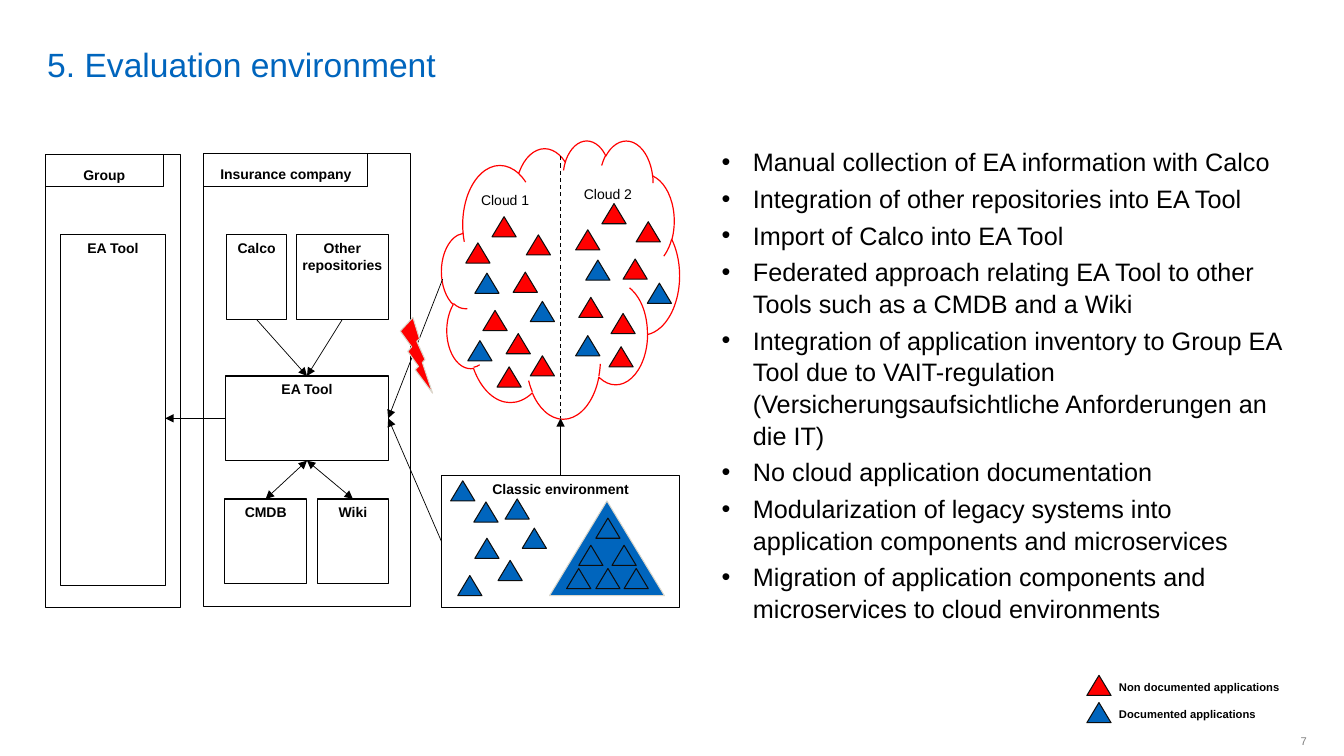
import pptx
import pptx.util
import pptx.dml.color
import pptx.enum.dml
import pptx.enum.shapes
import pptx.enum.text
import pptx.oxml.ns
from lxml import etree

Inches = pptx.util.Inches
Pt = pptx.util.Pt
RGBColor = pptx.dml.color.RGBColor
SHAPE = pptx.enum.shapes.MSO_SHAPE
ALIGN = pptx.enum.text.PP_ALIGN
ANCHOR = pptx.enum.text.MSO_ANCHOR
qn = pptx.oxml.ns.qn

BLACK = RGBColor(0x00, 0x00, 0x00)
INK = RGBColor(0x0D, 0x0D, 0x0D)
WHITE = RGBColor(0xFF, 0xFF, 0xFF)
RED = RGBColor(0xFF, 0x00, 0x00)
BLUE = RGBColor(0x00, 0x65, 0xBD)
GREY = RGBColor(0x80, 0x80, 0x80)
SAND = RGBColor(0xDA, 0xD7, 0xCB)

TOP, LEFT, BOTTOM, RIGHT = range(4)

CLASSIC_APPS = [(4.54, 5.71), (4.94, 5.56), (4.71, 5.34), (5.18, 5.24),
                (4.7, 4.98), (5.01, 4.95), (4.47, 4.77)]
LEGACY_MODULES = [(5.91, 5.14), (5.74, 5.41), (6.07, 5.41),
                  (5.62, 5.64), (5.91, 5.64), (6.19, 5.64)]
CLOUD_DOCUMENTED = [(4.64, 3.38), (5.26, 2.99), (4.71, 2.71),
                    (5.71, 3.33), (6.42, 2.81), (5.81, 2.58)]
CLOUD_UNDOCUMENTED = [(5.02, 3.31), (4.79, 3.08), (5.09, 2.7), (4.62, 2.41),
                      (4.93, 3.64), (5.26, 3.53), (4.88, 2.15), (5.22, 2.33),
                      (6.06, 3.11), (5.74, 2.95), (6.18, 2.57), (5.71, 2.28),
                      (6.04, 3.44), (5.97, 2.02), (6.31, 2.2)]
FINDINGS = [
    "Manual collection of EA information with Calco",
    "Integration of other repositories into EA Tool",
    "Import of Calco into EA Tool",
    "Federated approach relating EA Tool to other Tools such as a CMDB and a Wiki",
    "Integration of application inventory to Group EA Tool due to VAIT-regulation "
    "(Versicherungsaufsichtliche Anforderungen an die IT)",
    "No cloud application documentation",
    "Modularization of legacy systems into application components and microservices",
    "Migration of application components and microservices to cloud environments",
]


class Diagram:
    font = "Arial"

    def __init__(self, slide):
        self.slide = slide

    def fill_text(self, shape, lines, size, color=BLACK, bold=False, align=ALIGN.LEFT,
                  anchor=ANCHOR.TOP, inset=(0.1, 0.05), gap=0, spacing=None, bullet=None):
        frame = shape.text_frame
        frame.text = "\n".join(lines)
        frame.word_wrap = True
        frame.vertical_anchor = anchor
        frame.margin_left = frame.margin_right = Inches(inset[0])
        frame.margin_top = frame.margin_bottom = Inches(inset[1])
        for index, paragraph in enumerate(frame.paragraphs):
            paragraph.alignment = align
            if spacing:
                paragraph.line_spacing = spacing
            if index and gap:
                paragraph.space_before = Pt(gap)
            if bullet:
                properties = paragraph._p.get_or_add_pPr()
                properties.set("marL", str(Inches(0.31)))
                properties.set("indent", str(-Inches(0.31)))
                etree.SubElement(properties, qn("a:buFont"), typeface=self.font)
                etree.SubElement(properties, qn("a:buChar"), char=bullet)
            for run in paragraph.runs:
                run.font.name = self.font
                run.font.size = Pt(size)
                run.font.bold = bold
                run.font.color.rgb = color

    def text(self, at, lines, size, **style):
        box = self.slide.shapes.add_textbox(*map(Inches, at))
        self.fill_text(box, lines, size, **style)

    def shape(self, kind, at, fill=WHITE, line=BLACK, weight=0.75):
        shape = self.slide.shapes.add_shape(kind, *map(Inches, at))
        shape.shadow.inherit = False
        if fill is None:
            shape.fill.background()
        else:
            shape.fill.solid()
            shape.fill.fore_color.rgb = fill
        shape.line.color.rgb = line
        shape.line.width = Pt(weight)
        return shape

    def box(self, at, label=None, inset=(0.1, 0.05)):
        box = self.shape(SHAPE.RECTANGLE, at, weight=0.85)
        if label:
            self.fill_text(box, [label], 10, bold=True, align=ALIGN.CENTER, inset=inset)
        return box

    def tab(self, at, label):
        """Heading frame in the corner of an organisation's box."""
        tab = self.shape(SHAPE.RECTANGLE, at, fill=None)
        self.fill_text(tab, [label], 10, bold=True, align=ALIGN.CENTER, inset=(0.12, 0.12))

    def apps(self, places, fill):
        """One small application triangle at each place."""
        for left, top in places:
            self.shape(SHAPE.ISOSCELES_TRIANGLE, (left, top, 0.24, 0.2), fill, INK)

    def link(self, start, end, arrows=("tailEnd",), weight=0.5, dashed=False):
        """Line between two ends, each an (x, y) point or a (box, side) pair."""
        start_joins, end_joins = (hasattr(place[0], "shape_id") for place in (start, end))
        from_point = (0, 0) if start_joins else start
        to_point = (0, 0) if end_joins else end
        link = self.slide.shapes.add_connector(
            pptx.enum.shapes.MSO_CONNECTOR.STRAIGHT, *map(Inches, from_point + to_point))
        if start_joins:
            link.begin_connect(*start)
        if end_joins:
            link.end_connect(*end)
        link.line.color.rgb = BLACK
        link.line.width = Pt(weight)
        if dashed:
            link.line.dash_style = pptx.enum.dml.MSO_LINE.DASH
        properties = link._element.spPr
        for arrow in arrows:
            etree.SubElement(properties.find(qn("a:ln")), qn("a:" + arrow), type="triangle")
        etree.SubElement(properties, qn("a:effectLst"))


def draw_organisations(diagram):
    """Draws group and insurer; returns the insurer's EA tool."""
    diagram.box((2.02, 1.52, 2.05, 4.5))
    diagram.tab((2.02, 1.52, 1.63, 0.33), "Insurance company")
    diagram.box((0.45, 1.53, 1.34, 4.5))
    diagram.tab((0.45, 1.53, 1.17, 0.32), "Group")
    diagram.box((0.6, 2.33, 1.04, 3.48), "EA Tool")
    ea_tool = diagram.box((2.24, 3.73, 1.61, 0.84), "EA Tool")
    spreadsheet = diagram.box((2.25, 2.33, 0.59, 0.84), "Calco")
    repositories = diagram.box((2.94, 2.33, 0.91, 0.84), "Other repositories", (0.04, 0.05))
    cmdb = diagram.box((2.23, 4.95, 0.81, 0.84), "CMDB")
    wiki = diagram.box((3.15, 4.95, 0.7, 0.84), "Wiki")
    for feeder in (spreadsheet, repositories):
        diagram.link((feeder, BOTTOM), (ea_tool, TOP))
    for partner in (cmdb, wiki):
        diagram.link((partner, TOP), (ea_tool, BOTTOM), ("headEnd", "tailEnd"))
    diagram.link((ea_tool, LEFT), (1.64, 4.15))
    return ea_tool


def draw_environments(diagram, ea_tool):
    classic = diagram.box((4.38, 4.72, 2.36, 1.31), "Classic environment")
    diagram.shape(SHAPE.CLOUD, (4.38, 1.39, 2.36, 2.76), line=RED, weight=0.85)
    diagram.link((5.56, 1.55), (5.56, 4.15), (), 0.75, dashed=True)
    for name, left, top in (("Cloud 1", 4.13, 1.85), ("Cloud 2", 5.15, 1.79)):
        diagram.text((left, top, 1.76, 0.27), [name], 10, align=ALIGN.CENTER)
    diagram.link((4.39, 2.77), (ea_tool, RIGHT))
    diagram.link((classic, LEFT), (ea_tool, RIGHT))
    diagram.link((classic, TOP), (5.56, 4.15))
    diagram.shape(SHAPE.ISOSCELES_TRIANGLE, (5.45, 4.97, 1.14, 0.94), BLUE, SAND)
    diagram.apps(LEGACY_MODULES + CLASSIC_APPS + CLOUD_DOCUMENTED, BLUE)
    diagram.apps(CLOUD_UNDOCUMENTED, RED)
    diagram.shape(SHAPE.LIGHTNING_BOLT, (3.97, 3.15, 0.32, 0.75), RED, SAND)


def main():
    deck = pptx.Presentation()
    deck.slide_width, deck.slide_height = Inches(13.33), Inches(7.5)
    diagram = Diagram(deck.slides.add_slide(deck.slide_layouts[6]))

    diagram.text((0.37, 0.05, 11.58, 0.79), ["5. Evaluation environment"], 24,
                 color=BLUE, anchor=ANCHOR.BOTTOM, inset=(0.1, 0))
    ea_tool = draw_organisations(diagram)
    draw_environments(diagram, ea_tool)
    diagram.text((7.06, 1.39, 5.91, 5.59), FINDINGS, 18, gap=3.5, spacing=1.05, bullet="•")

    diagram.apps([(10.78, 6.7)], RED)
    diagram.apps([(10.78, 6.97)], BLUE)
    diagram.text((11, 6.7, 1.9, 0.45),
                 ["Non documented applications", "Documented applications"],
                 8, bold=True, gap=10)
    diagram.text((12.6, 7.19, 0.46, 0.32), ["7"], 8, color=GREY,
                 align=ALIGN.RIGHT, anchor=ANCHOR.MIDDLE)
    deck.save("out.pptx")


if __name__ == "__main__":
    main()
